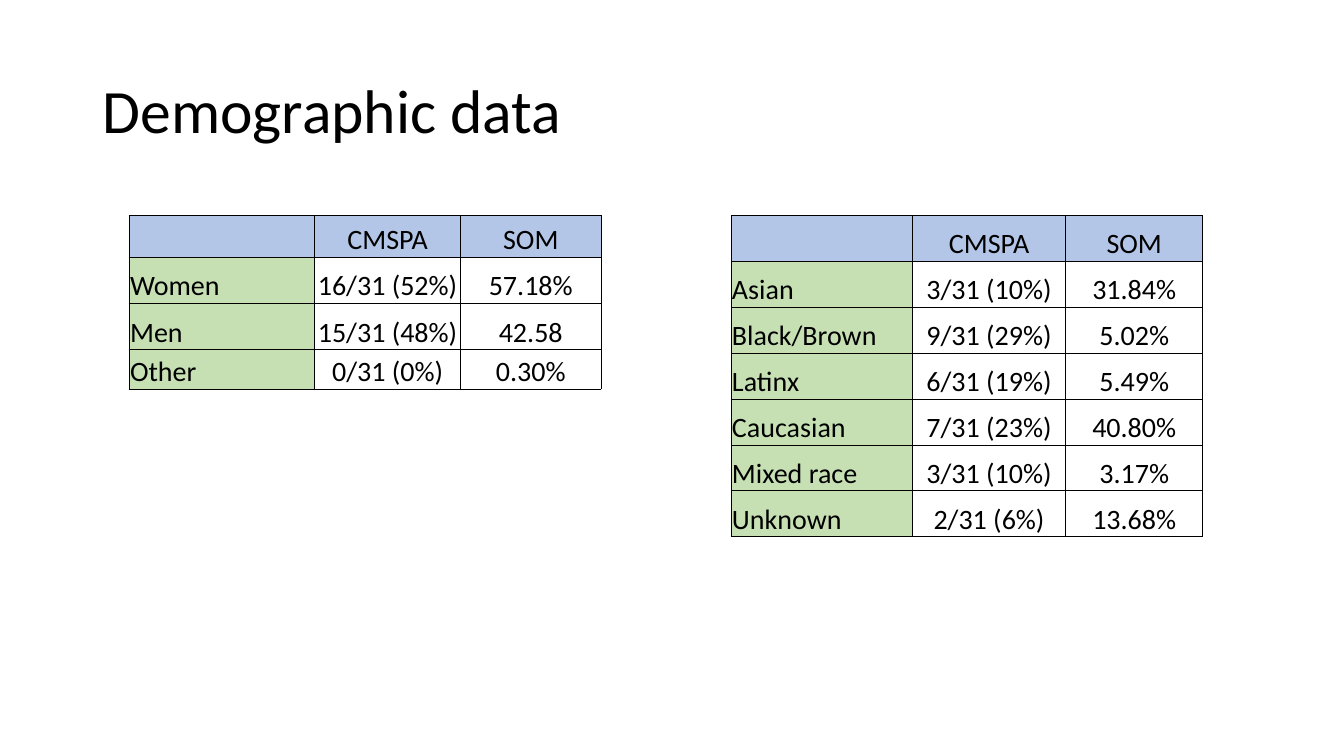
from dataclasses import dataclass

from lxml.etree import SubElement
from pptx import Presentation
from pptx.dml.color import RGBColor as RGB
from pptx.enum.text import MSO_ANCHOR as Anchor, PP_ALIGN as Align
from pptx.oxml.ns import qn
from pptx.util import Inches, Pt


@dataclass(frozen=True)
class Theme:
    font: str = "Calibri"
    title_size: int = 44
    cell_size: int = 20
    border_width: float = 0.5
    ink: str = "000000"
    header: str = "B4C6E7"
    label: str = "C6E0B4"


THEME = Theme()
COLUMNS = ("", "CMSPA", "SOM")
GENDER = [
    COLUMNS,
    ("Women", "16/31 (52%)", "57.18%"),
    ("Men", "15/31 (48%)", "42.58"),
    ("Other", "0/31 (0%)", "0.30%"),
]
ETHNICITY = [
    COLUMNS,
    ("Asian", "3/31 (10%)", "31.84%"),
    ("Black/Brown", "9/31 (29%)", "5.02%"),
    ("Latinx", "6/31 (19%)", "5.49%"),
    ("Caucasian", "7/31 (23%)", "40.80%"),
    ("Mixed race", "3/31 (10%)", "3.17%"),
    ("Unknown", "2/31 (6%)", "13.68%"),
]


def add_run(p, text, size):
    r = p.add_run()
    r.text = text
    r.font.name = THEME.font
    r.font.size = Pt(size)
    r.font.color.rgb = RGB.from_string(THEME.ink)


def add_title(s, text, left, top, width, height):
    box = s.shapes.add_textbox(*map(Inches, (left, top, width, height)))
    tf = box.text_frame
    tf.word_wrap = True
    tf.vertical_anchor = Anchor.MIDDLE
    p = tf.paragraphs[0]
    p.line_spacing = 0.9
    add_run(p, text, THEME.title_size)


def set_borders(cell):
    tc_pr = cell._tc.get_or_add_tcPr()
    for side in ("a:lnL", "a:lnR", "a:lnT", "a:lnB"):
        line = SubElement(tc_pr, qn(side), w=str(Pt(THEME.border_width)))
        fill = SubElement(line, qn("a:solidFill"))
        SubElement(fill, qn("a:srgbClr"), val=THEME.ink)


def fill_cell(cell, text, row, col):
    cell.margin_left = cell.margin_right = cell.margin_top = Inches(0.01)
    cell.margin_bottom = 0
    cell.vertical_anchor = Anchor.BOTTOM
    set_borders(cell)
    if row and col:
        cell.fill.background()
    else:
        cell.fill.solid()
        color = THEME.label if row else THEME.header
        cell.fill.fore_color.rgb = RGB.from_string(color)
    if text:
        p = cell.text_frame.paragraphs[0]
        p.alignment = Align.CENTER if col else Align.LEFT
        add_run(p, text, THEME.cell_size)


def add_data_table(s, data, left, top, widths, heights):
    box = map(Inches, (left, top, sum(widths), sum(heights)))
    table = s.shapes.add_table(len(data), len(widths), *box).table
    table.first_row = False
    table.horz_banding = False
    for column, width in zip(table.columns, widths):
        column.width = Inches(width)
    for row, height in zip(table.rows, heights):
        row.height = Inches(height)
    for i, values in enumerate(data):
        for j, text in enumerate(values):
            fill_cell(table.cell(i, j), text, i, j)


def build_slide(prs):
    s = prs.slides.add_slide(prs.slide_layouts[6])
    add_title(s, "Demographic data", 0.92, 0.4, 11.5, 1.45)
    add_data_table(s, ETHNICITY, 7.25, 2.14, (1.8, 1.52, 1.36),
                   [0.455] * len(ETHNICITY))
    add_data_table(s, GENDER, 1.28, 2.14, (1.84, 1.45, 1.39),
                   (0.41, 0.46, 0.46, 0.39))


def main():
    prs = Presentation()
    prs.slide_width = Inches(13.33)
    prs.slide_height = Inches(7.5)
    build_slide(prs)
    prs.save("out.pptx")


if __name__ == "__main__":
    main()
